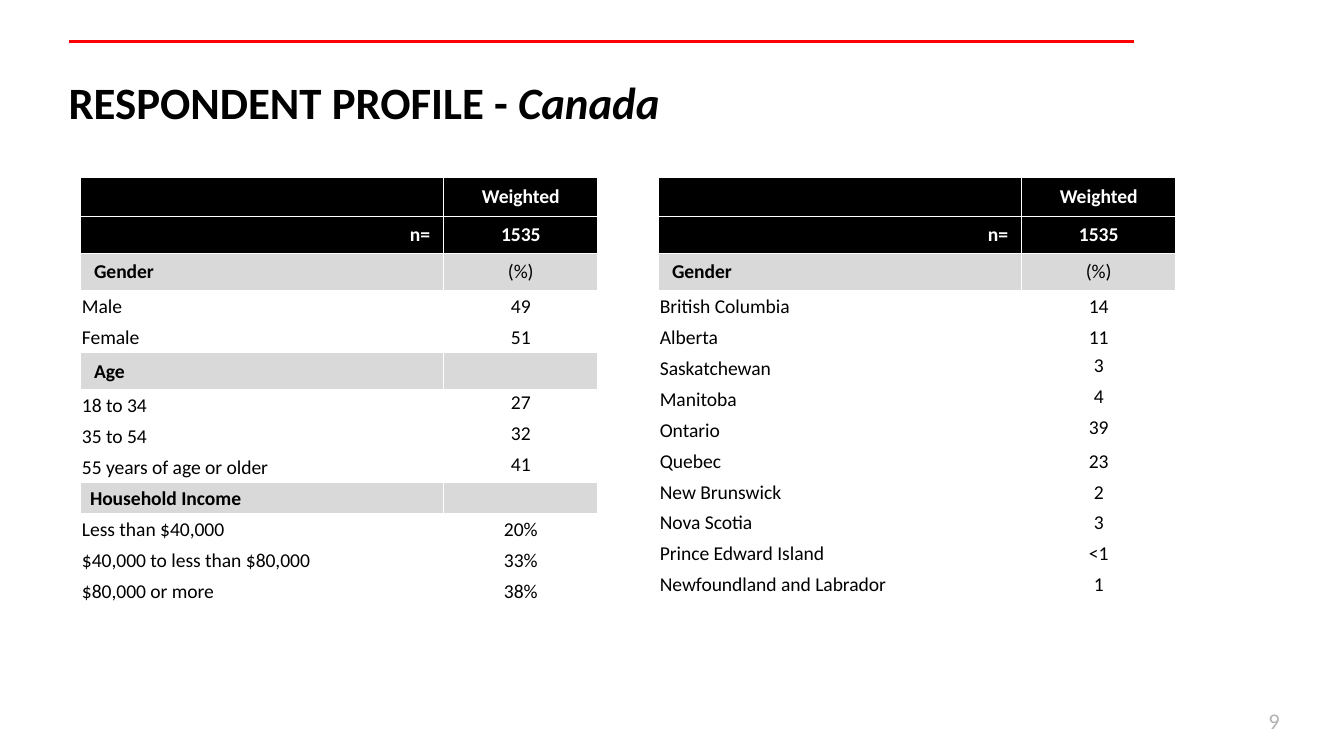
from lxml import etree
from pptx import Presentation
from pptx.dml.color import RGBColor
from pptx.enum import shapes, text
from pptx.oxml.ns import qn
from pptx.util import Inches, Pt

# Content: (kind, label, value)
TITLE = [("RESPONDENT PROFILE - ", False), ("Canada", True)]
PAGE_NUMBER = "9"
HEADER = [("head", "", "Weighted"), ("count", "n=", "1535"),
          ("group", "Gender", "(%)")]
DEMOGRAPHICS = HEADER + [
    ("item", "Male", "49"),
    ("item", "Female", "51"),
    ("group", "Age", ""),
    ("item_top", "18 to 34", "27"),
    ("item_top", "35 to 54", "32"),
    ("item_top", "55 years of age or older", "41"),
    ("subgroup", "Household Income", ""),
    ("item", "Less than $40,000", "20%"),
    ("item", "$40,000 to less than $80,000", "33%"),
    ("item", "$80,000 or more", "38%"),
]
PROVINCES = HEADER + [
    ("item", "British Columbia", "14"),
    ("item", "Alberta", "11"),
    ("item_top", "Saskatchewan", "3"),
    ("item_top", "Manitoba", "4"),
    ("item_top", "Ontario", "39"),
    ("item", "Quebec", "23"),
    ("item", "New Brunswick", "2"),
    ("item", "Nova Scotia", "3"),
    ("item", "Prince Edward Island", "<1"),
    ("item", "Newfoundland and Labrador", "1"),
]

THEME = {
    "font": "Calibri", "title": 24, "cell": 10.5, "page": 12,
    "black": "000000", "white": "FFFFFF", "band": "D9D9D9",
    "rule": "FF0000", "grey": "B3B3B3",
}
# Row kinds: height, fill, text colour, side margin
KINDS = {
    "head": (0.29, "black", "white", 0.1),
    "count": (0.25, "black", "white", 0.1),
    "group": (0.25, "band", "black", 0.1),
    "subgroup": (0.23, "band", "black", 0.07),
    "item": (0.23, None, "black", 0.01),
    "item_top": (0.23, None, "black", 0.01),
}
SLIDE_WIDTH = 10
COLUMNS = (2.7, 1.15)
TABLE_TOP = 1.32
TABLES = [(0.6, DEMOGRAPHICS), (4.9, PROVINCES)]


def rgb(name):
    return RGBColor.from_string(THEME[name])


def add_run(p, words, size, colour, bold=False, italic=False):
    r = p.add_run()
    r.text = words
    f = r.font
    f.name, f.size, f.bold, f.italic = THEME["font"], Pt(THEME[size]), bold, italic
    f.color.rgb = rgb(colour)


def add_borders(cell):
    tc_pr = cell._tc.get_or_add_tcPr()
    for i, side in enumerate(("lnL", "lnR", "lnT", "lnB")):
        ln = etree.Element(qn("a:" + side), w=str(Pt(1)))
        fill = etree.SubElement(ln, qn("a:solidFill"))
        etree.SubElement(fill, qn("a:srgbClr"), val=THEME["white"])
        tc_pr.insert(i, ln)


def fill_cell(cell, kind, col, words):
    _, fill, colour, side = KINDS[kind]
    if fill:
        cell.fill.solid()
        cell.fill.fore_color.rgb = rgb(fill)
    else:
        cell.fill.background()
    add_borders(cell)

    cell.margin_left = cell.margin_right = Inches(side)
    if kind in ("item", "item_top", "subgroup"):
        cell.margin_top, cell.margin_bottom = Inches(0.01), 0
    top = col == 1 and kind in ("item_top", "group")
    cell.vertical_anchor = text.MSO_ANCHOR.TOP if top else text.MSO_ANCHOR.MIDDLE

    p = cell.text_frame.paragraphs[0]
    if col == 1:
        p.alignment = text.PP_ALIGN.CENTER
    elif kind == "count":
        p.alignment = text.PP_ALIGN.RIGHT
    else:
        p.alignment = text.PP_ALIGN.LEFT
    if words:
        bold = kind in ("head", "count") or (
            col == 0 and kind in ("group", "subgroup"))
        add_run(p, words, "cell", colour, bold)
    else:  # keeps an empty row from growing
        etree.SubElement(p._p, qn("a:endParaRPr"), sz=str(int(THEME["cell"] * 100)))


def add_profile_table(s, left, rows):
    heights = [KINDS[kind][0] for kind, _, _ in rows]
    table = s.shapes.add_table(
        len(rows), len(COLUMNS), Inches(left), Inches(TABLE_TOP),
        Inches(sum(COLUMNS)), Inches(sum(heights))).table
    table.first_row = table.horz_banding = False
    for column, width in zip(table.columns, COLUMNS):
        column.width = Inches(width)
    for i, (kind, *cells) in enumerate(rows):
        table.rows[i].height = Inches(heights[i])
        for col, words in enumerate(cells):
            fill_cell(table.cell(i, col), kind, col, words)


def main():
    prs = Presentation()
    prs.slide_width = Inches(SLIDE_WIDTH)
    prs.slide_height = Inches(SLIDE_WIDTH * 9 / 16)
    s = prs.slides.add_slide(prs.slide_layouts[5])

    # Rule above the title
    rule = s.shapes.add_connector(shapes.MSO_CONNECTOR.STRAIGHT, Inches(0.51),
                                  Inches(0.31), Inches(8.44), Inches(0.31))
    rule.line.color.rgb = rgb("rule")
    rule.line.width = Pt(1.5)
    etree.SubElement(rule._element.spPr, qn("a:effectLst"))

    # Title
    title = s.shapes.title
    title.left, title.top = Inches(0.41), Inches(0.47)
    title.width, title.height = Inches(7.92), Inches(0.57)
    title.text_frame.vertical_anchor = text.MSO_ANCHOR.MIDDLE
    p = title.text_frame.paragraphs[0]
    p.alignment = text.PP_ALIGN.LEFT
    for words, italic in TITLE:
        add_run(p, words, "title", "black", True, italic)

    # Tables
    for left, rows in TABLES:
        add_profile_table(s, left, rows)

    # Page number
    tf = s.shapes.add_textbox(Inches(7.29), Inches(5.21),
                              Inches(2.33), Inches(0.3)).text_frame
    tf.word_wrap = True
    tf.vertical_anchor = text.MSO_ANCHOR.MIDDLE
    p = tf.paragraphs[0]
    p.alignment = text.PP_ALIGN.RIGHT
    add_run(p, PAGE_NUMBER, "page", "grey")

    prs.save("out.pptx")


if __name__ == "__main__":
    main()
